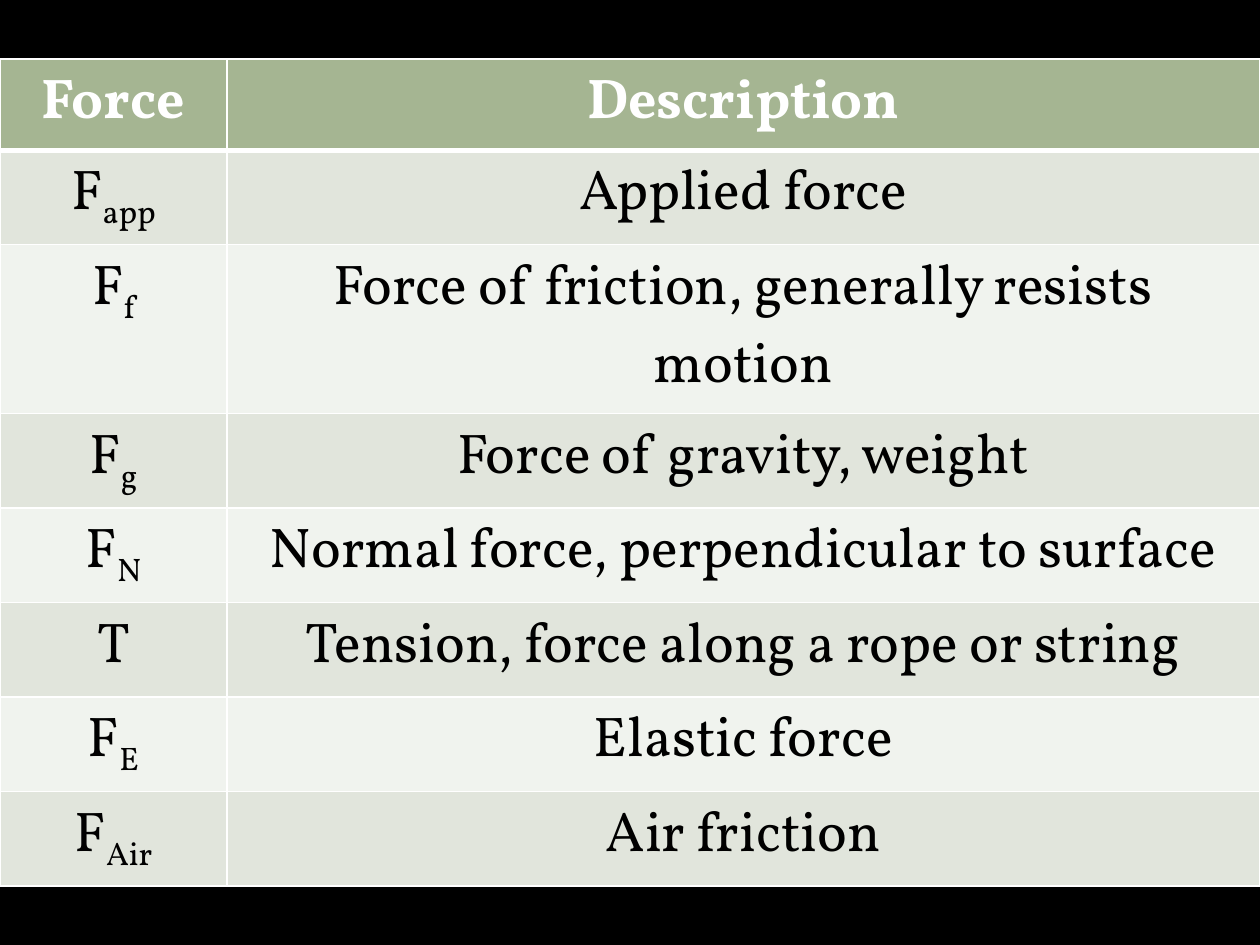
from lxml.etree import SubElement as Sub
from pptx import Presentation
from pptx.dml.color import RGBColor as RGB
from pptx.enum.text import PP_ALIGN as ALIGN
from pptx.oxml.ns import qn
from pptx.util import Pt

BLACK, WHITE = RGB(0, 0, 0), RGB(255, 255, 255)
HEADER = RGB(0xA5, 0xB5, 0x92)
BANDS = RGB(0xF0, 0xF3, 0xEE), RGB(0xE1, 0xE5, 0xDC)
FONT, SIZE = "Vollkorn", 32
COLUMNS = 129.6, 590.4
HEADER_HEIGHT, ROW_HEIGHT, TALL_HEIGHT = 52, 54, 96.5
FORCES = [
    ("F", "app", "Applied force"),
    ("F", "f", "Force of friction, generally resists motion"),
    ("F", "g", "Force of gravity, weight"),
    ("F", "N", "Normal force, perpendicular to surface"),
    ("T", "", "Tension, force along a rope or string"),
    ("F", "E", "Elastic force"),
    ("F", "Air", "Air friction"),
]


class Deck:
    """Holds the table style and the current slide."""

    def __init__(self, width, height):
        self.prs = Presentation()
        self.prs.slide_width, self.prs.slide_height = Pt(width), Pt(height)
        self.s = self.prs.slides.add_slide(self.prs.slide_layouts[6])

    def background(self, color):
        fill = self.s.background.fill
        fill.solid()
        fill.fore_color.rgb = color

    def run(self, p, text, color, bold=False, subscript=False):
        r = p.add_run()
        r.text = text
        r.font.name, r.font.size = FONT, Pt(SIZE)
        r.font.bold, r.font.color.rgb = bold, color
        if subscript:
            r.font._element.set("baseline", "-25000")

    def borders(self, cell, top, bottom):
        tc_pr = cell._tc.get_or_add_tcPr()
        for side, width in zip("LRTB", (1, 1, top, bottom)):
            ln = Sub(tc_pr, qn(f"a:ln{side}"), w=str(Pt(width)))
            Sub(Sub(ln, qn("a:solidFill")), qn("a:srgbClr"), val=str(WHITE))

    def cell(self, cell, text, row, subscript=""):
        is_header = row == 0
        self.borders(cell, 3 if row == 1 else 1, 3 if is_header else 1)
        cell.fill.solid()
        cell.fill.fore_color.rgb = HEADER if is_header else BANDS[row % 2]
        p = cell.text_frame.paragraphs[0]
        p.alignment = ALIGN.CENTER
        color = WHITE if is_header else BLACK
        self.run(p, text, color, bold=is_header)
        if subscript:
            self.run(p, subscript, color, subscript=True)

    def table(self, left, top, columns, heights, rows):
        frame = self.s.shapes.add_table(
            len(rows), len(columns), Pt(left), Pt(top), Pt(sum(columns)), Pt(sum(heights)))
        table = frame.table
        for column, width in zip(table.columns, columns):
            column.width = Pt(width)
        for i, (height, (symbol, subscript, description)) in enumerate(zip(heights, rows)):
            table.rows[i].height = Pt(height)
            self.cell(table.cell(i, 0), symbol, i, subscript)
            self.cell(table.cell(i, 1), description, i)


def main():
    deck = Deck(720, 540)
    deck.background(BLACK)
    heights = [HEADER_HEIGHT] + [ROW_HEIGHT] * len(FORCES)
    heights[2] = TALL_HEIGHT
    deck.table(0, 33.84, COLUMNS, heights, [("Force", "", "Description")] + FORCES)
    deck.prs.save("out.pptx")


if __name__ == "__main__":
    main()
